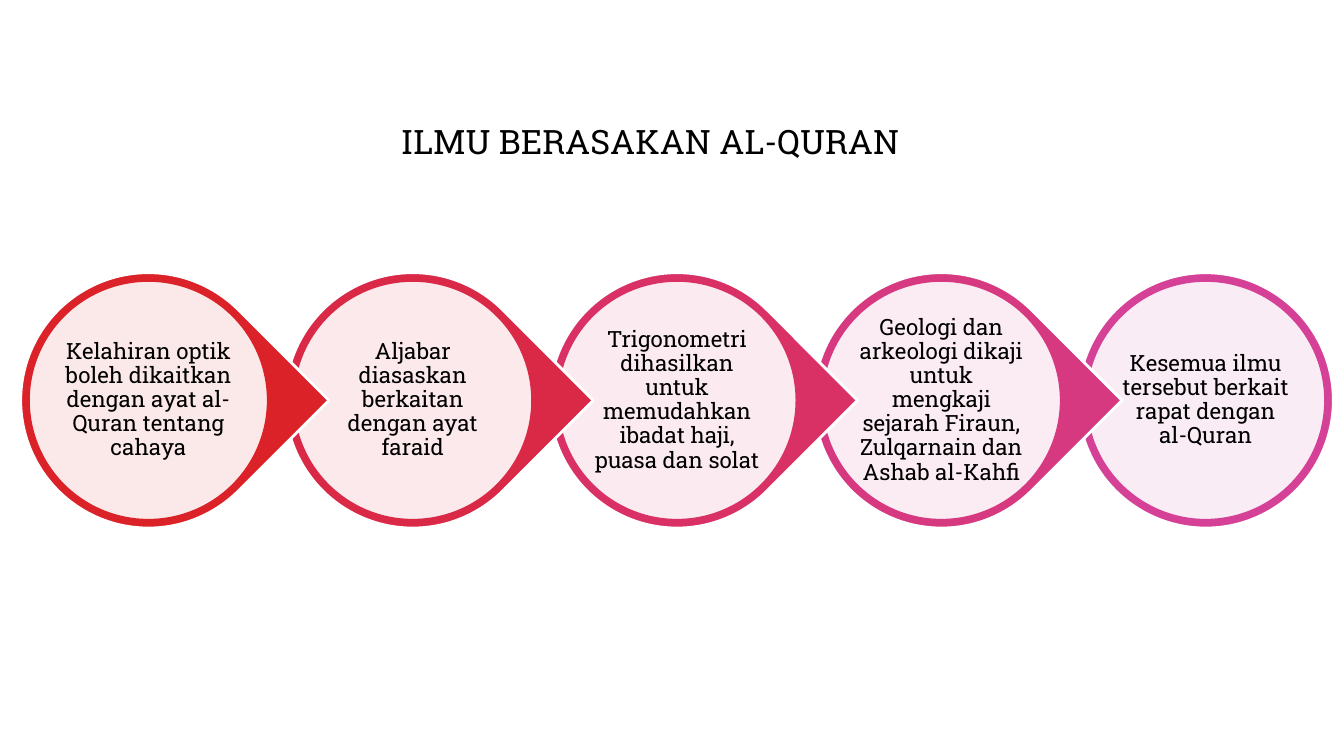
"""Build a slide with a chain of five circles on knowledge based on the Quran."""
from lxml import etree
from pptx import Presentation
from pptx.dml.color import RGBColor
from pptx.enum.shapes import MSO_SHAPE as SHAPE
from pptx.enum.text import MSO_ANCHOR as ANCHOR, MSO_AUTO_SIZE as AUTO, PP_ALIGN as ALIGN
from pptx.oxml.ns import qn
from pptx.util import Pt

COLORS = {"white": "FFFFFF", "black": "000000", "red": "DA2228", "crimson": "DA2847",
          "rose": "D93165", "pink": "D73980", "orchid": "D64198"}
FONT = "Roboto Slab"
STEPS = [
    ("red", "Kelahiran optik boleh dikaitkan dengan ayat al-Quran tentang cahaya"),
    ("crimson", "Aljabar diasaskan berkaitan dengan ayat faraid"),
    ("rose", "Trigonometri dihasilkan untuk memudahkan ibadat haji, puasa dan solat"),
    ("pink", "Geologi dan arkeologi dikaji untuk mengkaji sejarah Firaun, "
             "Zulqarnain dan Ashab al-Kahfi"),
    ("orchid", "Kesemua ilmu tersebut berkait rapat dengan al-Quran"),
]
FIRST_X, CENTER_Y, PITCH = 106, 286, 188.8
OUTER, INNER, LABEL = 182.4, 170.6, 121.7


def add_round(kind, cx, size, fill, line, width):
    sp = s.shapes.add_shape(kind, Pt(cx - size / 2), Pt(CENTER_Y - size / 2), Pt(size), Pt(size))
    sp.shadow.inherit = False
    sp.fill.solid()
    sp.fill.fore_color.rgb = RGBColor.from_string(COLORS[fill])
    sp.line.color.rgb = RGBColor.from_string(COLORS[line])
    sp.line.width = Pt(width)
    return sp


def set_text(tf, text, size):
    tf.text = text
    tf.word_wrap = True
    tf.vertical_anchor = ANCHOR.MIDDLE
    p = tf.paragraphs[0]
    p.alignment = ALIGN.CENTER
    font = p.runs[0].font
    font.name, font.size = FONT, Pt(size)
    font.color.rgb = RGBColor.from_string(COLORS["black"])
    return p


prs = Presentation()
prs.slide_width, prs.slide_height = Pt(960), Pt(540)
s = prs.slides.add_slide(prs.slide_layouts[5])

title = s.shapes.title
title.left, title.top, title.width, title.height = Pt(80.6), Pt(82.8), Pt(767.5), Pt(36)
set_text(title.text_frame, "ILMU BERASAKAN AL-QURAN", 24)
title.text_frame.auto_size = AUTO.SHAPE_TO_FIT_TEXT

for i, (color, text) in reversed(list(enumerate(STEPS))):
    cx = FIRST_X + i * PITCH
    last = i == len(STEPS) - 1
    drop = add_round(SHAPE.OVAL if last else SHAPE.TEAR, cx, OUTER, color, "white", 2)
    drop.rotation = 0 if last else 45

    disc = add_round(SHAPE.OVAL, cx, INNER, "white", color, 1.25)
    rgb = disc.fill._xPr.find(qn("a:solidFill"))[0]
    etree.SubElement(rgb, qn("a:alpha"), val="90000")

    label = s.shapes.add_textbox(Pt(cx - LABEL / 2), Pt(CENTER_Y - LABEL / 2), Pt(LABEL), Pt(LABEL))
    tf = label.text_frame
    tf.margin_left = tf.margin_right = tf.margin_top = tf.margin_bottom = Pt(1.5)
    set_text(tf, text, 16).line_spacing = 0.9

prs.save("out.pptx")
